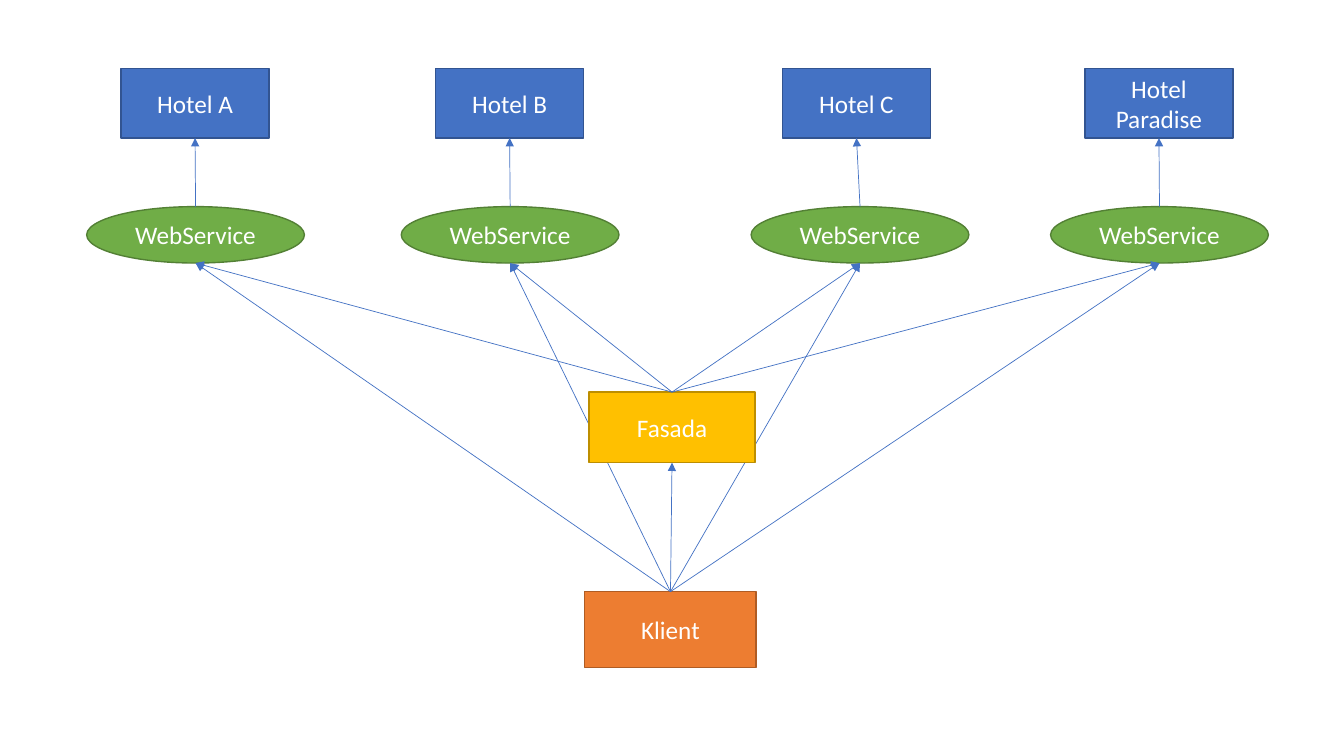
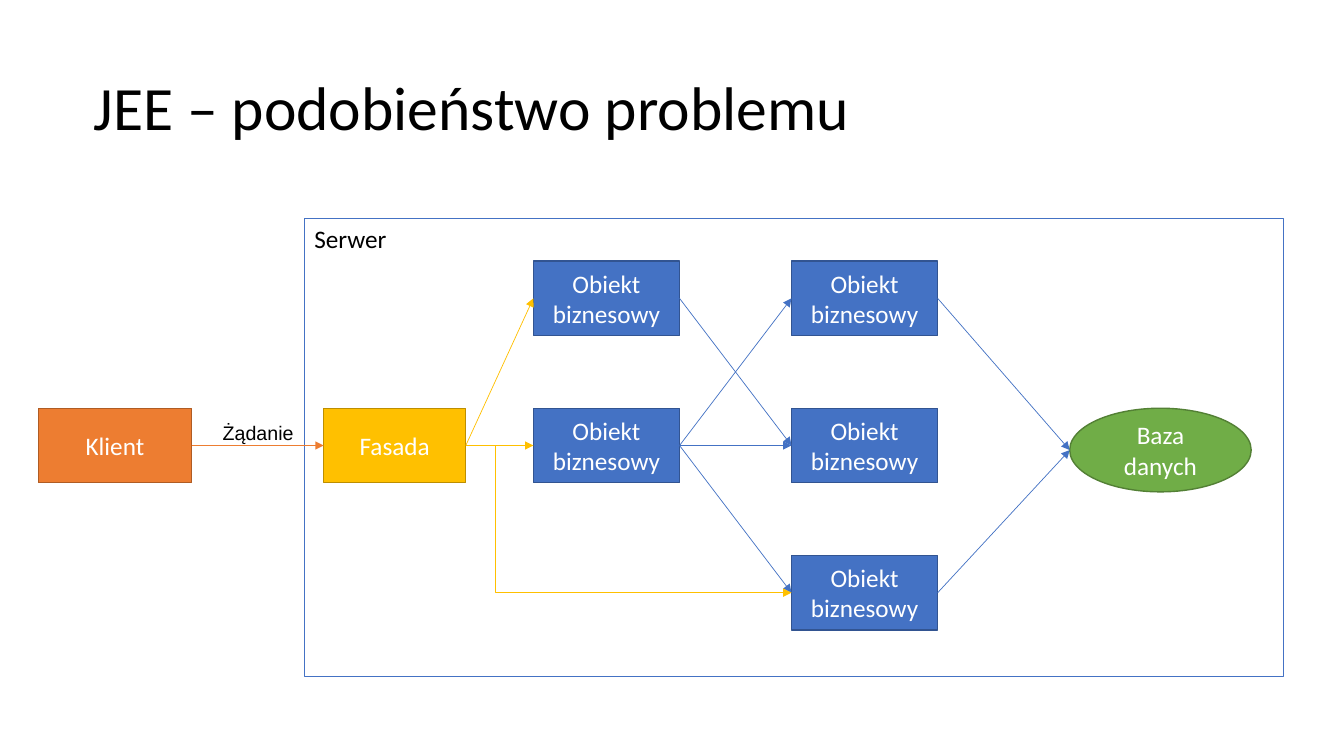
from pptx import Presentation
from pptx.dml.color import RGBColor
from pptx.enum.shapes import MSO_CONNECTOR, MSO_SHAPE
from pptx.enum.text import MSO_ANCHOR, MSO_AUTO_SIZE, PP_ALIGN
from pptx.oxml.ns import qn
from pptx.util import Inches, Pt
from lxml.etree import SubElement

HEX = {
    "blue": "4472C4", "navy": "325491",
    "green": "70AD47", "moss": "538035",
    "gold": "FFC000", "bronze": "BD8E00",
    "orange": "ED7D31", "rust": "AF5C24",
    "white": "FFFFFF", "black": "000000",
}
EDGE = {"blue": "navy", "green": "moss", "gold": "bronze", "orange": "rust"}
TOP, LEFT, LOW, RIGHT = range(4)
SPOT = {TOP: (0.5, 0), LEFT: (0, 0.5), LOW: (0.5, 1), RIGHT: (1, 0.5)}


def tint(name):
    return RGBColor.from_string(HEX[name])


def apply(item, form):
    for key, val in form.items():
        setattr(item, key, val)


class Deck:
    font = {"name": "Calibri", "size": Pt(18)}
    label = {"vertical_anchor": MSO_ANCHOR.MIDDLE, "word_wrap": True}
    plain = {"vertical_anchor": MSO_ANCHOR.TOP, "word_wrap": True}
    tight = {"word_wrap": False, "auto_size": MSO_AUTO_SIZE.SHAPE_TO_FIT_TEXT}

    def __init__(self):
        self.show = Presentation()
        apply(self.show, {"slide_width": Inches(13.33), "slide_height": Inches(7.5)})
        self.slide = None

    def page(self):
        self.slide = self.show.slides.add_slide(self.show.slide_layouts[6])

    def letter(self, item, text, frame, para, color, font=None):
        body = item.text_frame
        body.text = text
        apply(body, frame)
        first = body.paragraphs[0]
        apply(first, para)
        run = first.runs[0]
        apply(run.font, {**self.font, **(font or {})})
        run.font.color.rgb = tint(color)

    def shape(self, kind, area, fill, edge):
        item = self.slide.shapes.add_shape(kind, *map(Inches, area))
        item.shadow.inherit = False
        item.fill.solid()
        item.fill.fore_color.rgb = tint(fill)
        item.line.color.rgb = tint(edge)
        item.line.width = Pt(1)
        return item

    def node(self, text, area, fill="blue", kind=MSO_SHAPE.RECTANGLE):
        item = self.shape(kind, area, fill, EDGE[fill])
        self.letter(item, text, self.label, {"alignment": PP_ALIGN.CENTER}, "white")
        return item

    def oval(self, text, area):
        return self.node(text, area, "green", MSO_SHAPE.OVAL)

    def panel(self, text, area):
        item = self.shape(MSO_SHAPE.RECTANGLE, area, "white", "blue")
        self.letter(item, text, self.plain, {"alignment": PP_ALIGN.LEFT}, "black")

    def text(self, text, area, frame, para, font):
        item = self.slide.shapes.add_textbox(*map(Inches, area))
        self.letter(item, text, frame, para, "black", font)

    def title(self, text):
        self.text(text, (0.83, 0.72, 11.67, 1.22), self.plain,
                  {"line_spacing": 0.9}, {"size": Pt(44)})

    def spot(self, item, side):
        across, down = SPOT[side]
        return (int(item.left + across * item.width),
                int(item.top + down * item.height))

    def arrow(self, start, out, end, into, color="blue", bend=None):
        kind = MSO_CONNECTOR.STRAIGHT if bend is None else MSO_CONNECTOR.ELBOW
        line = self.slide.shapes.add_connector(
            kind, *self.spot(start, out), *self.spot(end, into))
        if bend is None:
            for item, side, join in ((start, out, line.begin_connect),
                                     (end, into, line.end_connect)):
                if item.auto_shape_type == MSO_SHAPE.RECTANGLE:
                    join(item, side)
        line.line.color.rgb = tint(color)
        line.line.width = Pt(0.5)
        props = line.element.spPr
        SubElement(props.find(qn("a:ln")), qn("a:tailEnd"), type="triangle")
        SubElement(props, qn("a:effectLst"))
        if bend is not None:
            geom = props.find(qn("a:prstGeom"))
            vals = geom.find(qn("a:avLst"))
            if vals is None:
                vals = SubElement(geom, qn("a:avLst"))
            SubElement(vals, qn("a:gd"), name="adj1", fmla=f"val {round(bend * 100000)}")


def hotels(deck):
    deck.page()
    names = {"Hotel A": (1.2, 0.86), "Hotel B": (4.32, 3.98),
             "Hotel C": (7.76, 7.45), "Hotel Paradise": (10.76, 10.42)}
    webs = []
    for name, (left, side) in names.items():
        hotel = deck.node(name, (left, 0.68, 1.47, 0.69))
        web = deck.oval("WebService", (side, 2.05, 2.16, 0.56))
        deck.arrow(web, TOP, hotel, LOW)
        webs.append(web)

    def fan(start):
        for web in webs:
            deck.arrow(start, TOP, web, LOW)

    client = deck.node("Klient", (5.8, 5.87, 1.7, 0.75), "orange")
    fan(client)
    front = deck.node("Fasada", (5.84, 3.89, 1.65, 0.7), "gold")
    fan(front)
    deck.arrow(client, TOP, front, LOW)


def server(deck):
    deck.page()
    deck.title("JEE – podobieństwo problemu")
    deck.panel("Serwer", (3.02, 2.17, 9.71, 4.54))
    mid, step, high = 4.05, 1.46, 0.74

    def column(left, rows):
        return [deck.node("Obiekt biznesowy", (left, mid + row * step, 1.45, high))
                for row in rows]

    first, second = column(5.29, (-1, 0))
    upper, centre, lower = column(7.85, (-1, 0, 1))
    base = deck.oval("Baza danych", (10.61, mid, 1.8, 0.83))
    front = deck.node("Fasada", (3.21, mid, 1.41, high), "gold")
    client = deck.node("Klient", (0.38, mid, 1.52, high), "orange")
    deck.text("Żądanie", (2.11, 4.13, 0.91, 0.34), deck.tight, {},
              {"name": "Arial", "size": Pt(14)})

    links = [(second, upper), (second, centre), (second, lower), (first, centre),
             (upper, base), (lower, base), (client, front, "orange"),
             (front, second, "gold"), (front, first, "gold"),
             (front, lower, "gold", 0.09)]
    for start, end, *look in links:
        deck.arrow(start, RIGHT, end, LEFT, *look)


def main():
    deck = Deck()
    hotels(deck)
    server(deck)
    deck.show.save("out.pptx")


if __name__ == "__main__":
    main()
